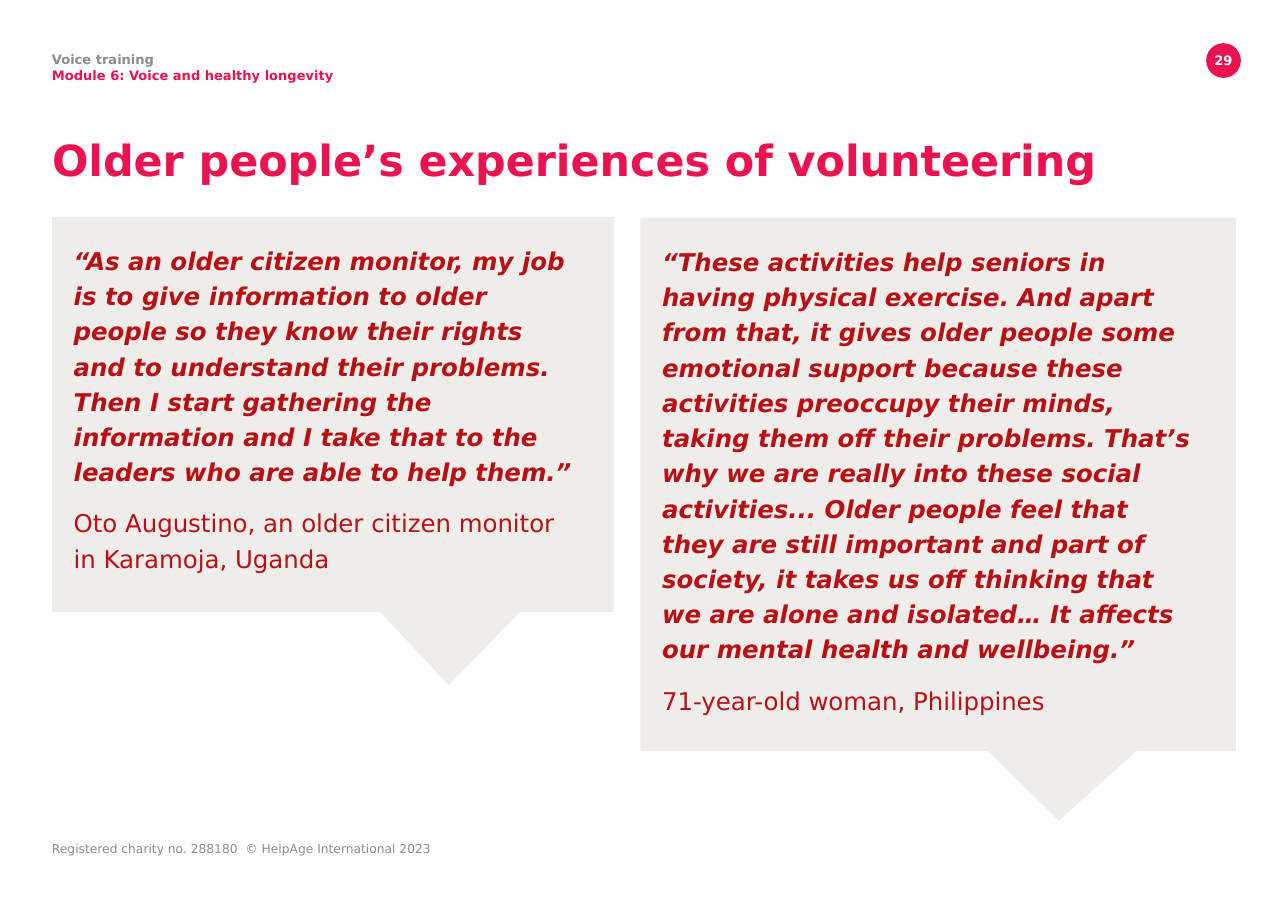
"""Build the slide on older people's experiences of volunteering."""
from dataclasses import dataclass

from lxml import etree
from pptx import Presentation
from pptx.dml.color import RGBColor
from pptx.enum.shapes import MSO_SHAPE
from pptx.enum.text import MSO_ANCHOR, PP_ALIGN
from pptx.oxml.ns import qn
from pptx.shapes.autoshape import Shape
from pptx.slide import Slide
from pptx.text.text import TextFrame
from pptx.util import Pt

OVAL = MSO_SHAPE.OVAL
TOP, MIDDLE = MSO_ANCHOR.TOP, MSO_ANCHOR.MIDDLE
LEFT, CENTER = PP_ALIGN.LEFT, PP_ALIGN.CENTER
FONT = "DejaVu Sans"
HEX = {"pink": "EB134F", "red": "B91015", "grey": "8C8C8C",
       "sand": "918470", "white": "FFFFFF"}
EDGE = 34
PAD_X, PAD_Y = 14.2, 15.2


@dataclass
class Quote:
    left: float
    top: float
    right: float
    bottom: float
    tail: tuple[float, float, float, float]
    width: float
    words: str
    source: str


QUOTES = [
    Quote(EDGE, 141.8, 401, 399.9, (248.2, 293.3, 339.8, 447.8), 331.3,
          "“As an older citizen monitor, my job is to give information to "
          "older people so they know their rights and to understand their "
          "problems. Then I start gathering the information and I take that "
          "to the leaders who are able to help them.”",
          "Oto Augustino, an older citizen monitor in Karamoja, Uganda"),
    Quote(418.5, 142.5, 807.6, 490.9, (645.6, 692, 742.7, 536.4), 345.6,
          "“These activities help seniors in having physical exercise. And "
          "apart from that, it gives older people some emotional support "
          "because these activities preoccupy their minds, taking them off "
          "their problems. That’s why we are really into these social "
          "activities... Older people feel that they are still important and "
          "part of society, it takes us off thinking that we are alone and "
          "isolated… It affects our mental health and wellbeing.”",
          "71-year-old woman, Philippines"),
]


def paint(shape: Shape, color: str, alpha: int = 100) -> None:
    shape.shadow.inherit = False
    shape.line.fill.background()
    shape.fill.solid()
    shape.fill.fore_color.rgb = RGBColor.from_string(HEX[color])
    if alpha < 100:
        tint = shape.element.spPr.find(".//" + qn("a:srgbClr"))
        etree.SubElement(tint, qn("a:alpha")).set("val", str(alpha * 1000))


def clear(frame: TextFrame, wrap: bool = True, anchor: MSO_ANCHOR = TOP) -> TextFrame:
    frame.margin_left = frame.margin_right = 0
    frame.margin_top = frame.margin_bottom = 0
    frame.word_wrap = wrap
    frame.vertical_anchor = anchor
    return frame


def box(slide: Slide, left: float, top: float, width: float, height: float) -> TextFrame:
    area = slide.shapes.add_textbox(Pt(left), Pt(top), Pt(width), Pt(height))
    return clear(area.text_frame)


def write(frame: TextFrame, text: str, *, size: float, color: str,
          bold: bool = False, slant: bool = False, align: PP_ALIGN = LEFT,
          space: float | Pt = 1.0, before: float = 0) -> None:
    para = frame.paragraphs[0]
    if para.runs:
        para = frame.add_paragraph()
    para.alignment = align
    para.line_spacing = space
    para.space_before = Pt(before)
    run = para.add_run()
    run.text = text
    font = run.font
    font.name, font.size = FONT, Pt(size)
    font.bold, font.italic = bold, slant
    font.color.rgb = RGBColor.from_string(HEX[color])


def draw(slide: Slide, quote: Quote) -> None:
    start, tip, end, low = quote.tail
    points = [(quote.right, quote.top), (quote.right, quote.bottom),
              (end, quote.bottom), (tip, low), (start, quote.bottom),
              (quote.left, quote.bottom)]
    pen = slide.shapes.build_freeform(Pt(quote.left), Pt(quote.top))
    pen.add_line_segments([(Pt(x), Pt(y)) for x, y in points])
    paint(pen.convert_to_shape(), "sand", 14)
    frame = box(slide, quote.left + PAD_X, quote.top + PAD_Y, quote.width,
                quote.bottom - quote.top - 2 * PAD_Y)
    write(frame, quote.words, size=16, color="red", bold=True, slant=True, space=1.2)
    write(frame, quote.source, size=16, color="red", space=1.2, before=10.4)


def badge(slide: Slide, number: str) -> None:
    disc = slide.shapes.add_shape(OVAL, Pt(788.2), Pt(28.2), Pt(22.7), Pt(22.7))
    paint(disc, "pink")
    frame = clear(disc.text_frame, wrap=False, anchor=MIDDLE)
    write(frame, number, size=8.5, color="white", bold=True, align=CENTER)


def main() -> None:
    deck = Presentation()
    deck.slide_width, deck.slide_height = Pt(841.68), Pt(595.44)
    slide = deck.slides.add_slide(deck.slide_layouts[6])
    badge(slide, "29")
    write(box(slide, EDGE, 550, 332, 24),
          "Registered charity no. 288180  © HelpAge International 2023",
          size=8, color="grey")
    write(box(slide, EDGE, 88, 743, 55), "Older people’s experiences of volunteering",
          size=28, color="pink", bold=True, space=Pt(33))
    head = box(slide, EDGE, 34, 369, 32)
    for text, color in (("Voice training", "grey"),
                        ("Module 6: Voice and healthy longevity", "pink")):
        write(head, text, size=8.5, color=color, bold=True, space=Pt(10))
    for quote in QUOTES:
        draw(slide, quote)
    deck.save("out.pptx")


if __name__ == "__main__":
    main()
